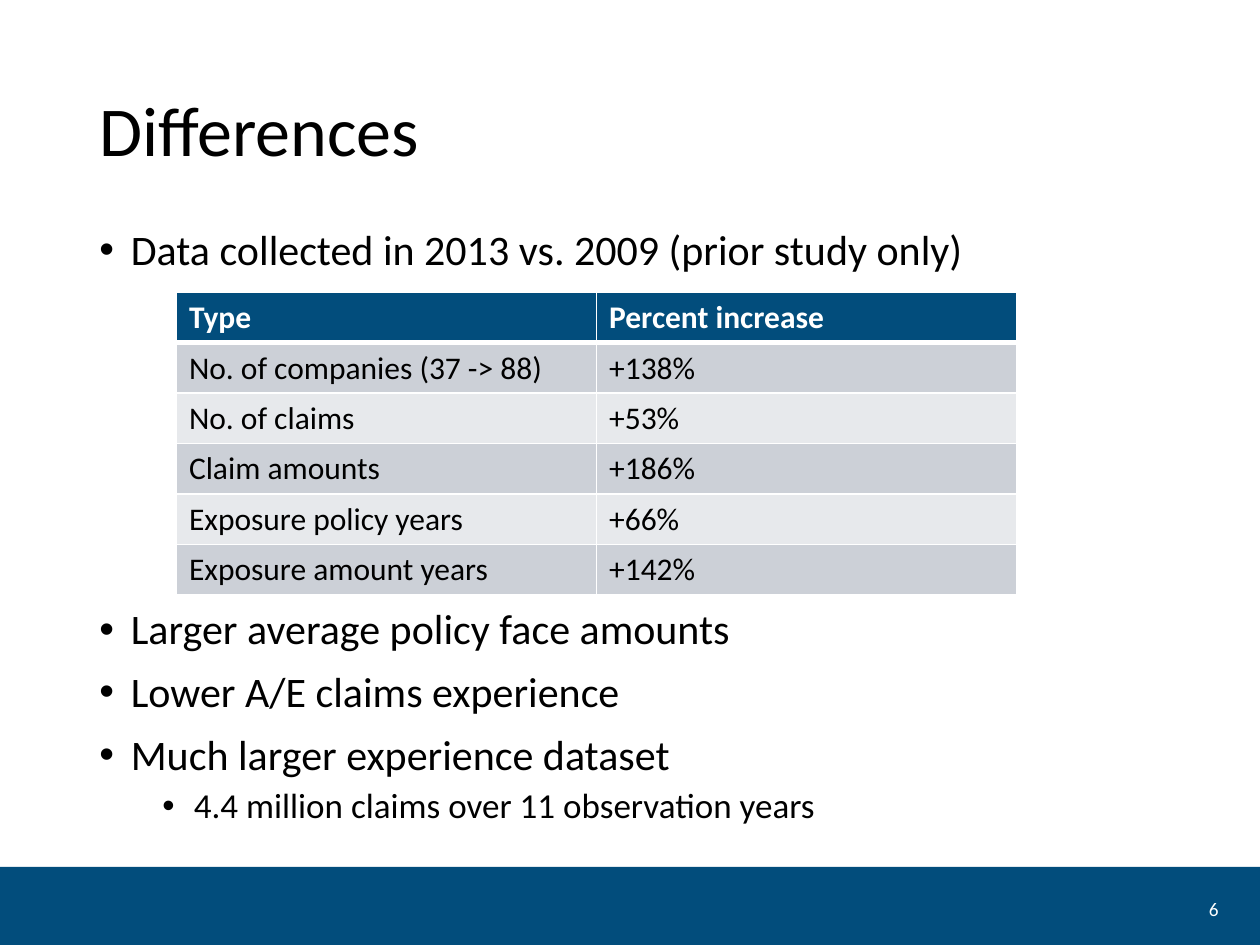
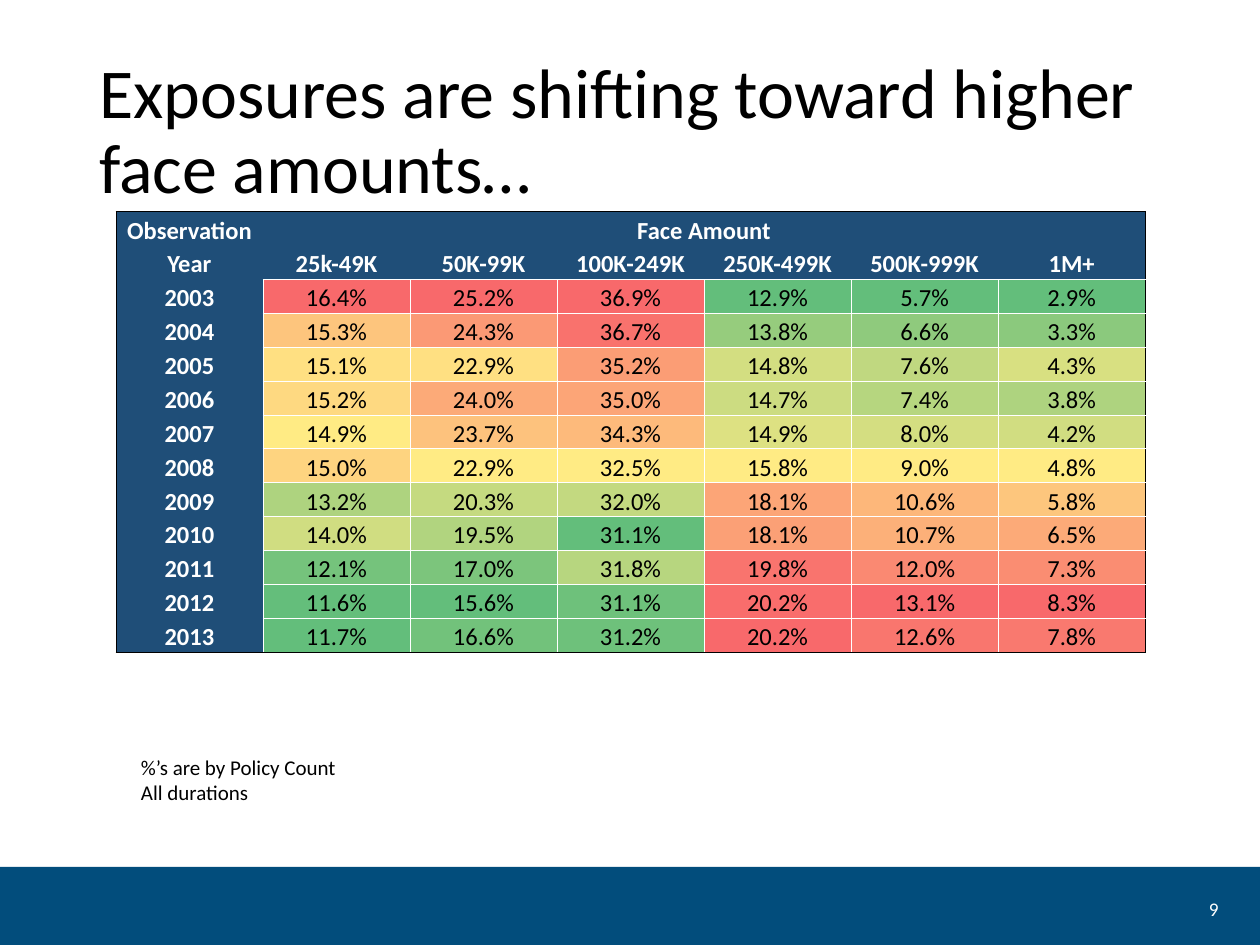
from lxml.etree import SubElement
from pptx import Presentation
from pptx.dml.color import RGBColor
from pptx.enum.shapes import MSO_SHAPE
from pptx.enum.text import MSO_ANCHOR, PP_ALIGN
from pptx.oxml import parse_xml
from pptx.oxml.ns import nsdecls, qn
from pptx.util import Inches, Pt

FONT = "Calibri"
WHITE = RGBColor(0xFF, 0xFF, 0xFF)
BLACK = RGBColor(0x00, 0x00, 0x00)
BAND_BLUE = RGBColor(0x02, 0x4D, 0x7C)
HEAT_BLUE = RGBColor(0x1F, 0x4E, 0x78)
ROW_DARK = RGBColor(0xCC, 0xD0, 0xD7)
ROW_LIGHT = RGBColor(0xE7, 0xE9, 0xEC)

INCREASES = [
    ("Type", "Percent increase"),
    ("No. of companies (37 -> 88)", "+138%"),
    ("No. of claims", "+53%"),
    ("Claim amounts", "+186%"),
    ("Exposure policy years", "+66%"),
    ("Exposure amount years", "+142%"),
]

FACE_AMOUNTS = ["25k-49K", "50K-99K", "100K-249K", "250K-499K", "500K-999K", "1M+"]
# Year: percentages by face amount, then the heat colour of each
EXPOSURES = {
    2003: ("16.4 25.2 36.9 12.9 5.7 2.9", "F8696B F8696B F8696B 63BE7B 63BE7B 63BE7B"),
    2004: ("15.3 24.3 36.7 13.8 6.6 3.3", "FDC57D FB9975 F9726D 96CC7D 8FCA7D 8BC97D"),
    2005: ("15.1 22.9 35.2 14.8 7.6 4.3", "FFE082 FFE082 FB9D75 D3DE81 C0D880 D8E081"),
    2006: ("15.2 24.0 35.0 14.7 7.4 3.8", "FED981 FCAA78 FCA577 CCDC81 B6D67F AED37F"),
    2007: ("14.9 23.7 34.3 14.9 8.0 4.2", "FFEB84 FDC27D FDBA7B DDE182 D4DE81 D1DD81"),
    2008: ("15.0 22.9 32.5 15.8 9.0 4.8", "FED480 FFEB84 FFEB84 FFEB84 FFEB84 FFEB84"),
    2009: ("13.2 20.3 32.0 18.1 10.6 5.8", "AED37F C5DA80 C3D980 FCA577 FDB77A FDC67D"),
    2010: ("14.0 19.5 31.1 18.1 10.7 6.5", "D0DD81 B1D47F 63BE7B FBA076 FCB079 FCAA78"),
    2011: ("12.1 17.0 31.8 19.8 12.0 7.3", "75C37C 7CC57C B7D67F F9746E FA8972 FA8D72"),
    2012: ("11.6 15.6 31.1 20.2 13.1 8.3", "64BE7B 63BE7B 6EC17B F96D6C F8696B F8696B"),
    2013: ("11.7 16.6 31.2 20.2 12.6 7.8", "63BE7B 72C27B 6EC17B F8696B F9766E F9796F"),
}


def write(para, text, size=18, color=BLACK, bold=False, align=None,
          line=None, before=None, bullet_at=None):
    """Fill a paragraph; bullet_at is the left edge of bulleted text in inches."""
    if bullet_at is not None:
        props = para._p.get_or_add_pPr()
        props.set("marL", str(Inches(bullet_at)))
        props.set("indent", str(Inches(-0.25)))
        SubElement(props, qn("a:buFont")).set("typeface", "Arial")
        SubElement(props, qn("a:buChar")).set("char", "•")
    if align is not None:
        para.alignment = align
    if line is not None:
        para.line_spacing = line
    if before is not None:
        para.space_before = Pt(before)
    span = para.add_run()
    span.text = text
    span.font.name = FONT
    span.font.size = Pt(size)
    span.font.bold = bold
    span.font.color.rgb = color


def add_text(page, box, entries, anchor=MSO_ANCHOR.TOP, **shared):
    """Add a text box; each entry is a text and its own format."""
    frame = page.shapes.add_textbox(*map(Inches, box)).text_frame
    frame.word_wrap = True
    frame.vertical_anchor = anchor
    for index, (text, own) in enumerate(entries):
        para = frame.add_paragraph() if index else frame.paragraphs[0]
        write(para, text, **{**shared, **own})


def set_borders(cell, **sides):
    """Draw sides L, R, T, B given as (colour, points); clear the others."""
    props = cell._tc.get_or_add_tcPr()
    for index, side in enumerate("LRTB"):
        color, points = sides.get(side, (None, 0))
        paint = (f'<a:solidFill><a:srgbClr val="{color}"/></a:solidFill>'
                 if color is not None else "<a:noFill/>")
        props.insert(index, parse_xml(
            f'<a:ln{side} {nsdecls("a")} w="{Pt(points)}">{paint}</a:ln{side}>'))


def add_grid(page, box, rows, columns):
    """Add a table with equal columns and equal rows."""
    left, top, width, height = box
    table = page.shapes.add_table(rows, columns, *map(Inches, box)).table
    table.first_row = table.horz_banding = False
    for column in table.columns:
        column.width = Inches(width / columns)
    for row in table.rows:
        row.height = Inches(height / rows)
    return table


def fill_cell(cell, text, fill, **style):
    cell.fill.solid()
    cell.fill.fore_color.rgb = fill
    write(cell.text_frame.paragraphs[0], text, **style)


def add_page(deck, title, number):
    """Add a slide with the shared title, bottom band and page number."""
    page = deck.slides.add_slide(deck.slide_layouts[6])
    band = page.shapes.add_shape(MSO_SHAPE.RECTANGLE, *map(Inches, (0, 6.88, 10, 0.62)))
    band.shadow.inherit = False
    band.fill.solid()
    band.fill.fore_color.rgb = BAND_BLUE
    band.line.fill.background()
    add_text(page, (0.69, 0.36, 8.62, 1.4), [(title, {})],
             MSO_ANCHOR.MIDDLE, size=40, line=0.9)
    add_text(page, (9.24, 7.1, 0.53, 0.22), [(str(number), {})],
             MSO_ANCHOR.MIDDLE, size=11, color=WHITE, align=PP_ALIGN.RIGHT)
    return page


def add_increase_table(page, box):
    table = add_grid(page, box, len(INCREASES), 2)
    thin, thick = (WHITE, 1), (WHITE, 3)
    for row, texts in enumerate(INCREASES):
        header = row == 0
        fill = BAND_BLUE if header else ROW_DARK if row % 2 else ROW_LIGHT
        for column, text in enumerate(texts):
            cell = table.cell(row, column)
            fill_cell(cell, text, fill, bold=header, color=WHITE if header else BLACK)
            set_borders(cell, L=thin, R=thin, T=thick if row == 1 else thin,
                        B=thick if header else thin)


def heat_borders(row, column, last_row, last_column):
    """Black outer frame, white lines around the percentages."""
    black, white = (BLACK, 0.5), (WHITE, 0.5)
    sides = {}
    if row > 1 and column > 0:
        sides = dict.fromkeys("LRTB", white)
    elif row > 1:
        sides["R"] = white
    elif row == 1 and column > 0:
        sides["B"] = white
    outer = {"L": column == 0, "R": column == last_column,
             "T": row == 0, "B": row == last_row}
    return sides | {side: black for side, on_edge in outer.items() if on_edge}


def add_heat_table(page, box):
    # Rows of (text, heat colour); a heading has no heat colour
    rows = [[("Observation", None), ("Face Amount", None)] + [("", None)] * 5,
            [(text, None) for text in ["Year"] + FACE_AMOUNTS]]
    for year, (values, colors) in EXPOSURES.items():
        cells = [(f"{value}%", RGBColor.from_string(color))
                 for value, color in zip(values.split(), colors.split())]
        rows.append([(str(year), None)] + cells)

    last_row, last_column = len(rows) - 1, len(FACE_AMOUNTS)
    table = add_grid(page, box, len(rows), last_column + 1)
    table.cell(0, 1).merge(table.cell(0, last_column))
    for row, cells in enumerate(rows):
        for column, (text, heat) in enumerate(cells):
            cell = table.cell(row, column)
            cell.margin_left = cell.margin_right = cell.margin_top = Inches(0.01)
            cell.margin_bottom = 0
            cell.vertical_anchor = MSO_ANCHOR.BOTTOM
            if text:
                fill_cell(cell, text, heat or HEAT_BLUE, size=14, bold=heat is None,
                          color=BLACK if heat else WHITE, align=PP_ALIGN.CENTER)
            edge = last_column if (row, column) == (0, 1) else column
            set_borders(cell, **heat_borders(row, edge, last_row, last_column))


def build_differences(deck):
    page = add_page(deck, "Differences", 6)
    bullet = {"size": 24, "line": 0.9, "bullet_at": 0.25}
    add_text(page, (0.69, 1.77, 8.62, 0.5),
             [("Data collected in 2013 vs. 2009 (prior study only)", {})], **bullet)
    add_text(page, (0.69, 4.78, 8.62, 1.6), [
        ("Larger average policy face amounts", {}),
        ("Lower A/E claims experience", {"before": 10}),
        ("Much larger experience dataset", {"before": 10}),
        ("4.4 million claims over 11 observation years",
         {"before": 5, "size": 20, "bullet_at": 0.75}),
    ], **bullet)
    add_increase_table(page, (1.4, 2.32, 6.67, 2.4))


def build_exposures(deck):
    page = add_page(deck, "Exposures are shifting toward higher face amounts…", 9)
    add_heat_table(page, (0.92, 1.68, 8.17, 3.5))
    add_text(page, (1.02, 5.94, 7.88, 0.5),
             [("%’s are by Policy Count", {}), ("All durations", {})], size=12)


def main():
    deck = Presentation()
    deck.slide_width, deck.slide_height = Inches(10), Inches(7.5)
    build_differences(deck)
    build_exposures(deck)
    deck.save("out.pptx")


if __name__ == "__main__":
    main()
